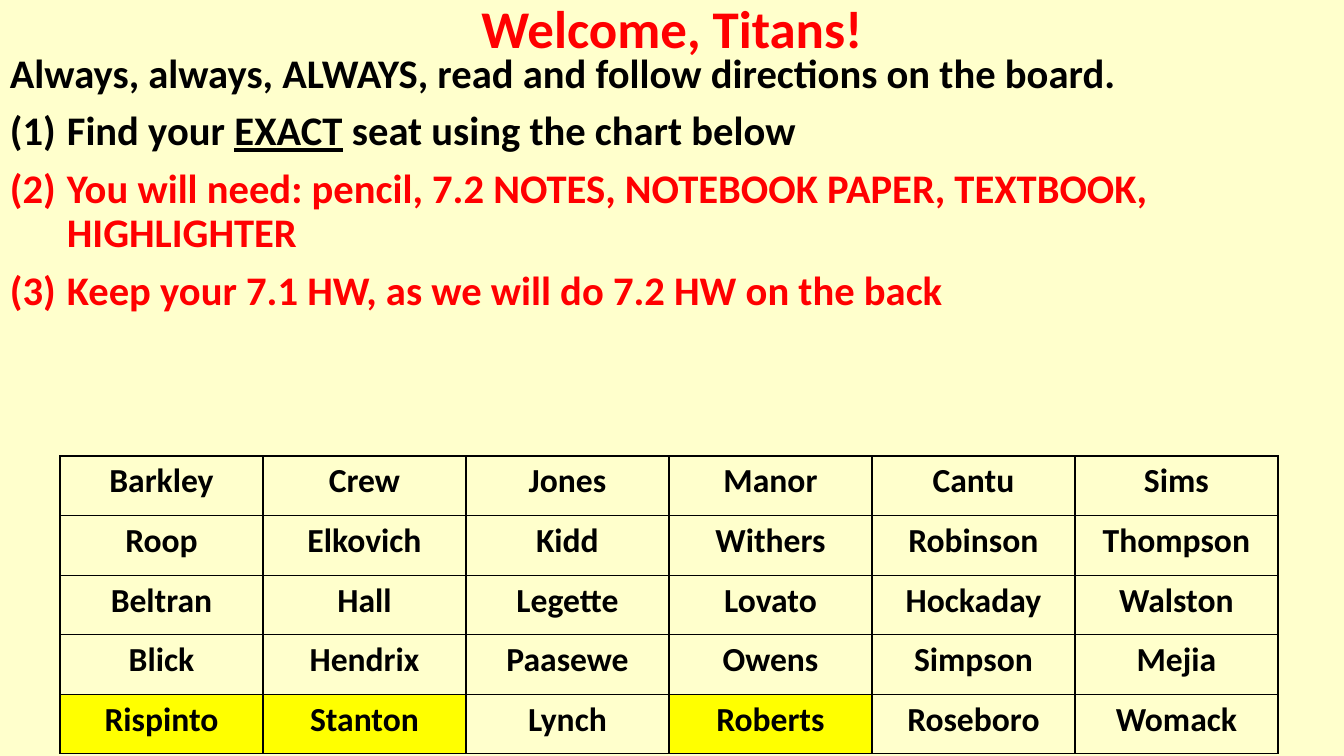
import pptx
import pptx.util
import pptx.dml.color
import pptx.enum.text
import pptx.oxml
import pptx.oxml.ns
import lxml.etree

EMU_PER_PX = 914400 / 100.8
FONT = "Calibri"
BLACK, RED, YELLOW, CREAM = "000000", "FF0000", "FFFF00", "FFFFCC"
CENTER = pptx.enum.text.PP_ALIGN.CENTER

SEATS = [
    ["Barkley", "Crew", "Jones", "Manor", "Cantu", "Sims"],
    ["Roop", "Elkovich", "Kidd", "Withers", "Robinson", "Thompson"],
    ["Beltran", "Hall", "Legette", "Lovato", "Hockaday", "Walston"],
    ["Blick", "Hendrix", "Paasewe", "Owens", "Simpson", "Mejia"],
    ["Rispinto", "Stanton", "Lynch", "Roberts", "Roseboro", "Womack"],
]
HIGHLIGHTED = {"Rispinto", "Stanton", "Roberts"}

STEPS = [
    (BLACK, ["Find your ", "EXACT", " seat using the chart below"]),
    (RED, ["You will need: pencil, 7.2 NOTES, NOTEBOOK PAPER, TEXTBOOK, HIGHLIGHTER"]),
    (RED, ["Keep your 7.1 HW, as we will do 7.2 HW on the back"]),
]


def px(n):
    return pptx.util.Emu(round(n * EMU_PER_PX))


def rgb(value):
    return pptx.dml.color.RGBColor.from_string(value)


def add_run(p, text, size, color=BLACK, underline=False):
    r = p.add_run()
    r.text = text
    r.font.name = FONT
    r.font.size = pptx.util.Pt(size)
    r.font.bold = True
    r.font.color.rgb = rgb(color)
    if underline:
        r.font.underline = True


def add_textbox(s, x, y, w, h, anchor):
    tf = s.shapes.add_textbox(px(x), px(y), px(w), px(h)).text_frame
    tf.word_wrap = True
    tf.vertical_anchor = anchor
    return tf


def number_paragraph(p, indent):
    """Give the paragraph a hanging (1), (2), ... number."""
    pPr = p._p.get_or_add_pPr()
    pPr.set("marL", str(px(indent)))
    pPr.set("indent", str(-px(indent)))
    bullet_font = lxml.etree.SubElement(pPr, pptx.oxml.ns.qn("a:buFont"))
    bullet_font.set("typeface", "+mj-lt")
    number = lxml.etree.SubElement(pPr, pptx.oxml.ns.qn("a:buAutoNum"))
    number.set("type", "arabicParenBoth")


def add_title(s):
    tf = add_textbox(s, 0, 0, 1344, 65, pptx.enum.text.MSO_ANCHOR.BOTTOM)
    p = tf.paragraphs[0]
    p.alignment = CENTER
    p.line_spacing = 0.9
    add_run(p, "Welcome, Titans!", 37.8, RED)


def add_directions(s):
    tf = add_textbox(s, 0, 48, 1344, 407, pptx.enum.text.MSO_ANCHOR.TOP)
    add_run(tf.paragraphs[0],
            "Always, always, ALWAYS, read and follow directions on the board.", 29)
    for color, texts in STEPS:
        p = tf.add_paragraph()
        for text in texts:
            add_run(p, text, 29, color, underline=text == "EXACT")
    for p in tf.paragraphs:
        p.line_spacing = 0.9
        p.space_before = pptx.util.Pt(10)
    for p in tf.paragraphs[1:]:
        number_paragraph(p, 57)


def set_borders(cell, color, width):
    tcPr = cell._tc.get_or_add_tcPr()
    for i, side in enumerate(("lnL", "lnR", "lnT", "lnB")):
        ln = pptx.oxml.parse_xml(
            f'<a:{side} {pptx.oxml.ns.nsdecls("a")} w="{pptx.util.Pt(width)}">'
            f'<a:solidFill><a:srgbClr val="{color}"/></a:solidFill></a:{side}>')
        tcPr.insert(i, ln)


def add_seating_chart(s, x, y, w, h):
    frame = s.shapes.add_table(len(SEATS), len(SEATS[0]), px(x), px(y), px(w), px(h))
    table = frame.table
    table.first_row = False
    table.horz_banding = False
    for i, names in enumerate(SEATS):
        for j, name in enumerate(names):
            cell = table.cell(i, j)
            if name in HIGHLIGHTED:
                cell.fill.solid()
                cell.fill.fore_color.rgb = rgb(YELLOW)
            else:
                cell.fill.background()
            set_borders(cell, BLACK, 1)
            p = cell.text_frame.paragraphs[0]
            p.alignment = CENTER
            add_run(p, name, 24)


def main():
    prs = pptx.Presentation()
    prs.slide_width, prs.slide_height = px(1344), px(756)
    s = prs.slides.add_slide(prs.slide_layouts[6])
    s.background.fill.solid()
    s.background.fill.fore_color.rgb = rgb(CREAM)
    add_title(s)
    add_directions(s)
    add_seating_chart(s, 60, 456, 1218, 298)
    prs.save("out.pptx")


if __name__ == "__main__":
    main()
